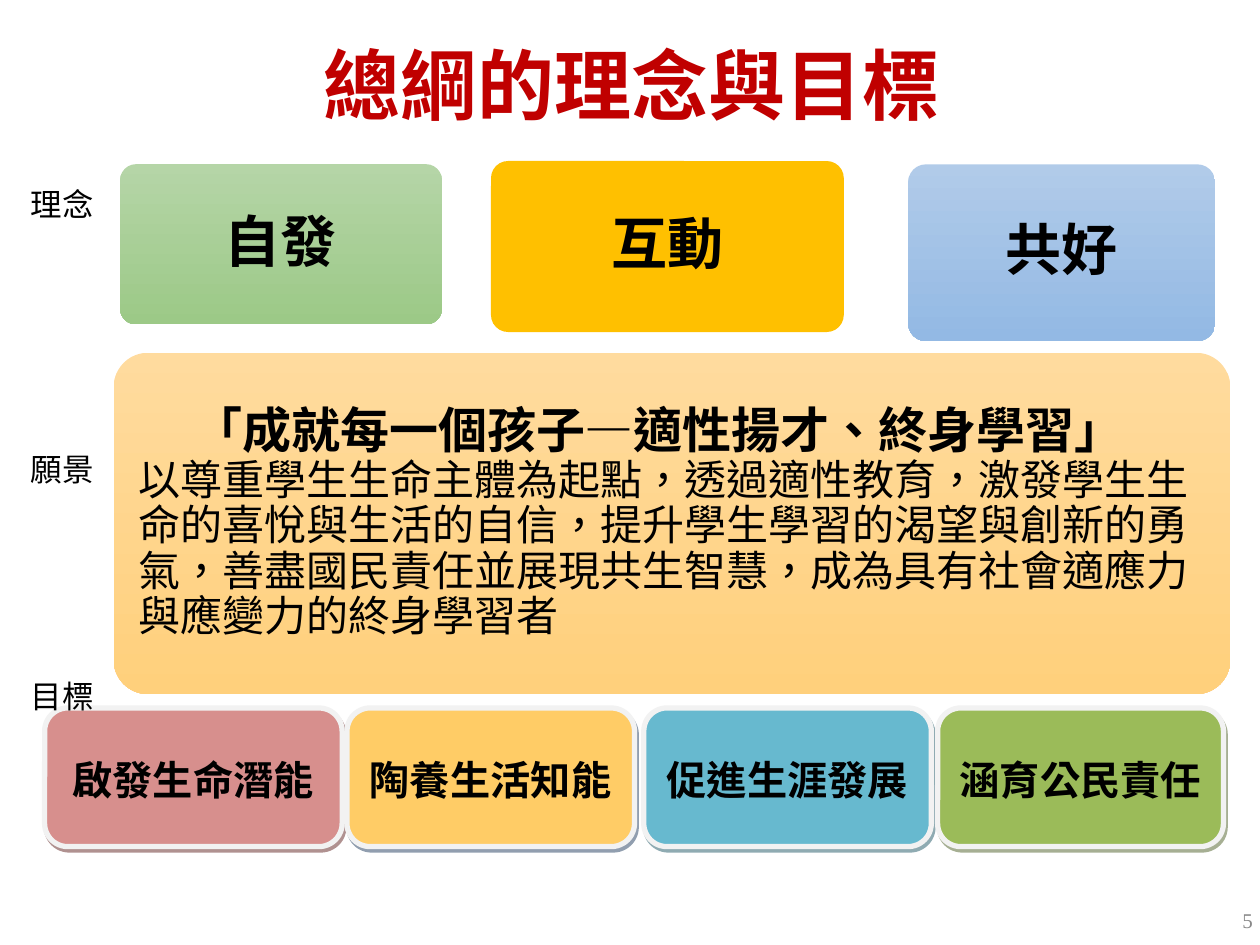
from lxml.etree import SubElement
from pptx import Presentation
from pptx.dml.color import RGBColor
from pptx.enum.shapes import MSO_SHAPE as SHAPE
from pptx.enum.text import MSO_ANCHOR as ANCHOR, PP_ALIGN as ALIGN
from pptx.oxml import parse_xml
from pptx.oxml.ns import nsdecls, qn
from pptx.util import Pt

CJK = "Noto Sans CJK SC"


def rgb(value):
    return RGBColor.from_string(value)


def style(p, text, size, color="000000", bold=False, align=ALIGN.CENTER, spacing=0.9, font=CJK):
    p.text = text
    p.runs[0].font._rPr.set("lang", "zh-TW")
    p.alignment = align
    p.line_spacing = spacing
    f = p.font
    f.size, f.bold, f.name = Pt(size), bold, font
    f.color.rgb = rgb(color)
    SubElement(f._rPr, qn("a:ea"), typeface=font)


prs = Presentation()
prs.slide_width, prs.slide_height = Pt(720), Pt(540)
s = prs.slides.add_slide(prs.slide_layouts[5])

title = s.shapes.title
title.left, title.top, title.width, title.height = Pt(37), Pt(22.5), Pt(648), Pt(57)
title.text_frame.vertical_anchor = ANCHOR.MIDDLE
style(title.text_frame.paragraphs[0], "總綱的理念與目標", 44, "C00000", True)

panels = [
    (65, 201.6, 638, 195, ("FFDB9E", "FFD07C"), None),
    (68.6, 93.8, 184, 91.6, ("B5D5A7", "9CC987"), "自發"),
    (280.6, 92, 201.6, 97.7, ("FFC000",), "互動"),
    (519, 93.9, 175.4, 101, ("B1CBE9", "93B9E4"), "共好"),
]
for x, y, w, h, colors, text in panels:
    sp = s.shapes.add_shape(SHAPE.ROUNDED_RECTANGLE, Pt(x), Pt(y), Pt(w), Pt(h))
    sp.adjustments[0] = 0.1
    sp.shadow.inherit = False
    sp.line.fill.background()
    if len(colors) == 2:
        sp.fill.gradient()
        sp.fill.gradient_angle = 270
        for stop, color in zip(sp.fill.gradient_stops, colors):
            stop.color.rgb = rgb(color)
    else:
        sp.fill.solid()
        sp.fill.fore_color.rgb = rgb(colors[0])
    tf = sp.text_frame
    tf.vertical_anchor = ANCHOR.MIDDLE
    if text:
        style(tf.paragraphs[0], text, 32, bold=True)
    else:
        tf.margin_left = tf.margin_right = Pt(8.4)
        p = tf.paragraphs[0]
        style(p, "「成就每一個孩子—適性揚才、終身學習」", 28, bold=True, align=ALIGN.LEFT)
        p._p.get_or_add_pPr().set("indent", str(Pt(31.5)))
        style(tf.add_paragraph(), "以尊重學生生命主體為起點，透過適性教育，激發學生生命的喜悅與生活的自信，"
              "提升學生學習的渴望與創新的勇氣，善盡國民責任並展現共生智慧，"
              "成為具有社會適應力與應變力的終身學習者", 24, align=ALIGN.LEFT)

goals = [
    (25.5, 170, "D78F8D", "622423", "啟發生命潛能"),
    (198.3, 164.3, "FFCC66", "243F60", "陶養生活知能"),
    (367.9, 164.3, "67B9CF", "205867", "促進生涯發展"),
    (535.8, 163.3, "9BBB59", "4E6128", "涵育公民責任"),
]
for x, w, color, shade, text in goals:
    sp = s.shapes.add_shape(SHAPE.ROUNDED_RECTANGLE, Pt(x), Pt(404.6), Pt(w), Pt(79.2))
    sp.fill.solid()
    sp.fill.fore_color.rgb = rgb(color)
    sp.line.color.rgb = rgb("F2F2F2")
    sp.line.width = Pt(3)
    sp._element.spPr.append(parse_xml(
        f'<a:effectLst {nsdecls("a")}><a:outerShdw dist="{Pt(2.2)}" dir="3780000" algn="ctr" rotWithShape="0">'
        f'<a:srgbClr val="{shade}"><a:alpha val="50000"/></a:srgbClr></a:outerShdw></a:effectLst>'))
    tf = sp.text_frame
    tf.vertical_anchor = ANCHOR.MIDDLE
    tf.margin_top, tf.margin_bottom = Pt(9), Pt(4)
    style(tf.paragraphs[0], text, 23, bold=True, spacing=0.96)

tf = s.shapes.add_textbox(Pt(10.4), Pt(102.4), Pt(54), Pt(312)).text_frame
tf.word_wrap = True
for i, (label, gap) in enumerate([("理念", 0), ("願景", 129.6), ("目標", 108)]):
    p = tf.add_paragraph() if i else tf.paragraphs[0]
    style(p, label, 18, align=ALIGN.LEFT, spacing=1.0)
    if i:
        p.space_before = Pt(gap)

tf = s.shapes.add_textbox(Pt(555), Pt(511), Pt(168), Pt(29)).text_frame
tf.word_wrap = True
tf.vertical_anchor = ANCHOR.MIDDLE
style(tf.paragraphs[0], "5", 12, "898989", align=ALIGN.RIGHT, spacing=1.0, font="Times New Roman")

prs.save("out.pptx")
